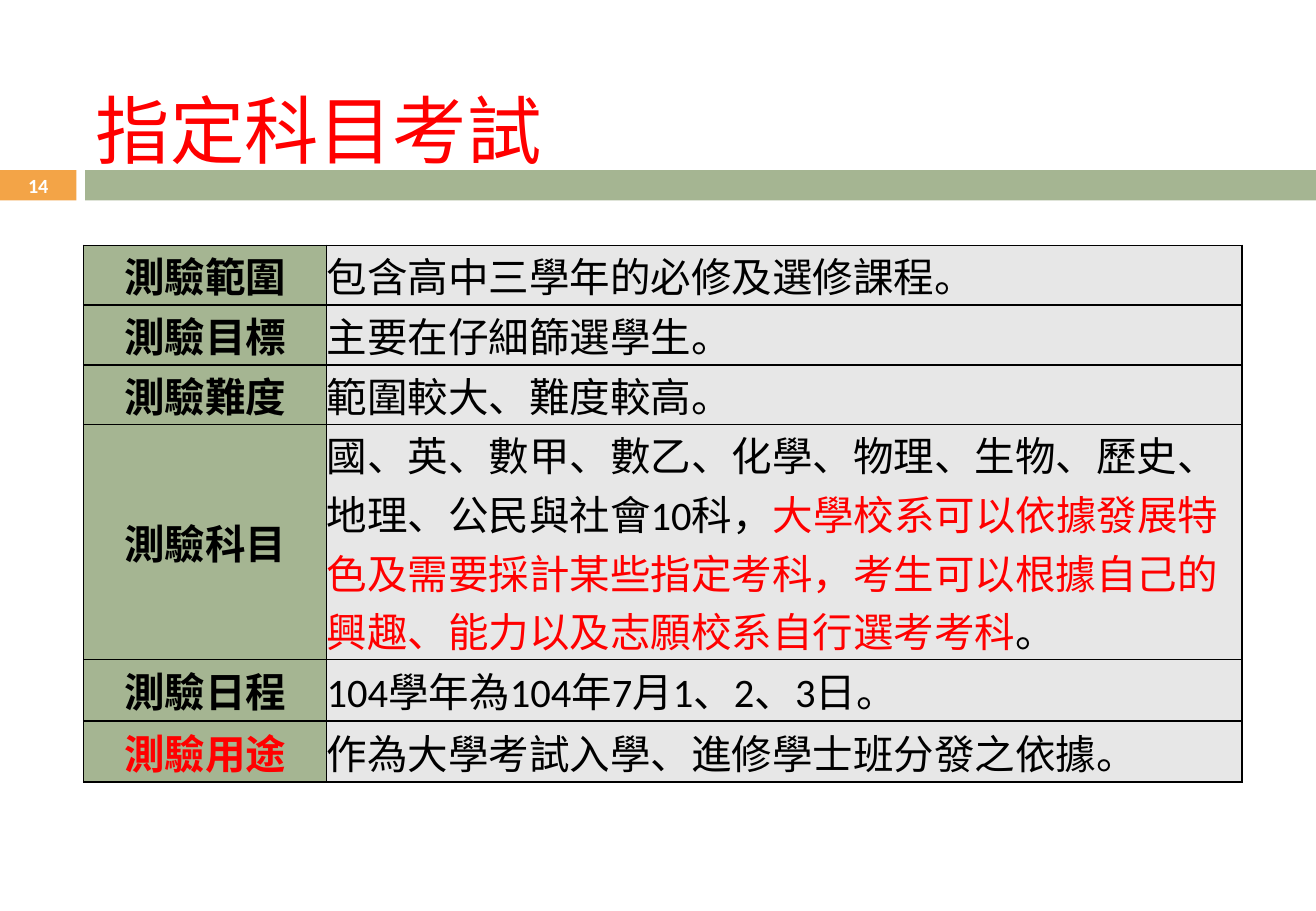
from dataclasses import dataclass

from lxml import etree
from pptx import Presentation
from pptx.dml.color import RGBColor
from pptx.enum.shapes import MSO_SHAPE
from pptx.enum.text import MSO_ANCHOR, MSO_AUTO_SIZE, PP_ALIGN
from pptx.oxml.ns import qn
from pptx.util import Cm, Pt

RECT = MSO_SHAPE.RECTANGLE
MIDDLE = MSO_ANCHOR.MIDDLE
NO_FIT = MSO_AUTO_SIZE.NONE
LEFT, CENTER = PP_ALIGN.LEFT, PP_ALIGN.CENTER


@dataclass(frozen=True)
class Theme:
    red: str = "FF0000"
    black: str = "000000"
    white: str = "FFFFFF"
    green: str = "A5B592"
    orange: str = "F3A447"
    gray: str = "E7E7E7"
    heading_font: str = "Arial"
    body_font: str = "Calibri"
    title_size: float = 44
    table_size: float = 24
    number_size: float = 11.9


T = Theme()


def style(font, name, size, color, bold=False):
    font.name, font.size, font.bold = name, Pt(size), bold
    font.color.rgb = RGBColor.from_string(color)


def fill_cell(cell, fill, align, runs, bold):
    cell.margin_left = cell.margin_right = cell.margin_top = cell.margin_bottom = 0
    cell.vertical_anchor = MIDDLE
    tcPr = cell._tc.get_or_add_tcPr()
    for side in ("a:lnL", "a:lnR", "a:lnT", "a:lnB"):
        ln = etree.SubElement(tcPr, qn(side), w=str(Pt(1)))
        solid = etree.SubElement(ln, qn("a:solidFill"))
        etree.SubElement(solid, qn("a:srgbClr"), val=T.black)
    cell.fill.solid()
    cell.fill.fore_color.rgb = RGBColor.from_string(fill)
    p = cell.text_frame.paragraphs[0]
    p.alignment = align
    for text, name, color in runs:
        r = p.add_run()
        r.text = text
        style(r.font, name, T.table_size, color, bold)


prs = Presentation()
prs.slide_width, prs.slide_height = Cm(27.51), Cm(19.05)
s = prs.slides.add_slide(prs.slide_layouts[5])

title = s.shapes.title
title.left, title.top, title.width, title.height = Cm(1.75), Cm(1.32), Cm(9.91), Cm(2.74)
tf = title.text_frame
tf.text = "指定科目考試"
tf.auto_size = NO_FIT
tf.vertical_anchor = MIDDLE
tf.margin_right = 0
p = tf.paragraphs[0]
p.alignment = LEFT
style(p.font, T.heading_font, T.title_size, T.red)

for left, width, color in ((0, 1.6, T.orange), (1.78, 25.73, T.green)):
    sp = s.shapes.add_shape(RECT, Cm(left), Cm(3.56), Cm(width), Cm(0.63))
    sp.shadow.inherit = False
    sp.fill.solid()
    sp.fill.fore_color.rgb = RGBColor.from_string(color)
    sp.line.fill.background()

rows = [
    ("範圍", T.black, 1.25, [("包含高中三學年的必修及選修課程。", T.black)]),
    ("目標", T.black, 1.25, [("主要在仔細篩選學生。", T.black)]),
    ("難度", T.black, 1.25, [("範圍較大、難度較高。", T.black)]),
    ("科目", T.black, 4.91, [
        ("國、英、數甲、數乙、化學、物理、生物、歷史、地理、公民與社會10科，", T.black),
        ("大學校系可以依據發展特色及需要採計某些指定考科，"
         "考生可以根據自己的興趣、能力以及志願校系自行選考考科", T.red),
        ("。", T.black),
    ]),
    ("日程", T.black, 1.28, [("104學年為104年7月1、2、3日。", T.black)]),
    ("用途", T.red, 1.28, [("作為大學考試入學、進修學士班分發之依據。", T.black)]),
]
height = sum(row[2] for row in rows)
table = s.shapes.add_table(len(rows), 2, Cm(1.75), Cm(5.13), Cm(24.21), Cm(height)).table
table.first_row = table.horz_banding = False
table.columns[0].width, table.columns[1].width = Cm(5.08), Cm(19.13)
for i, (topic, color, row_height, parts) in enumerate(rows):
    table.rows[i].height = Cm(row_height)
    heading = [("測驗", T.heading_font, color), (topic, T.body_font, color)]
    fill_cell(table.cell(i, 0), T.green, CENTER, heading, True)
    details = [(text, T.body_font, c) for text, c in parts]
    fill_cell(table.cell(i, 1), T.gray, LEFT, details, False)

number = s.shapes.add_textbox(0, Cm(3.53), Cm(1.6), Cm(0.69))
tf = number.text_frame
tf.word_wrap = True
tf.vertical_anchor = MIDDLE
tf.margin_top = tf.margin_bottom = 0
p = tf.paragraphs[0]
p.text = "14"
p.alignment = CENTER
style(p.font, T.body_font, T.number_size, T.white, True)

prs.save("out.pptx")
